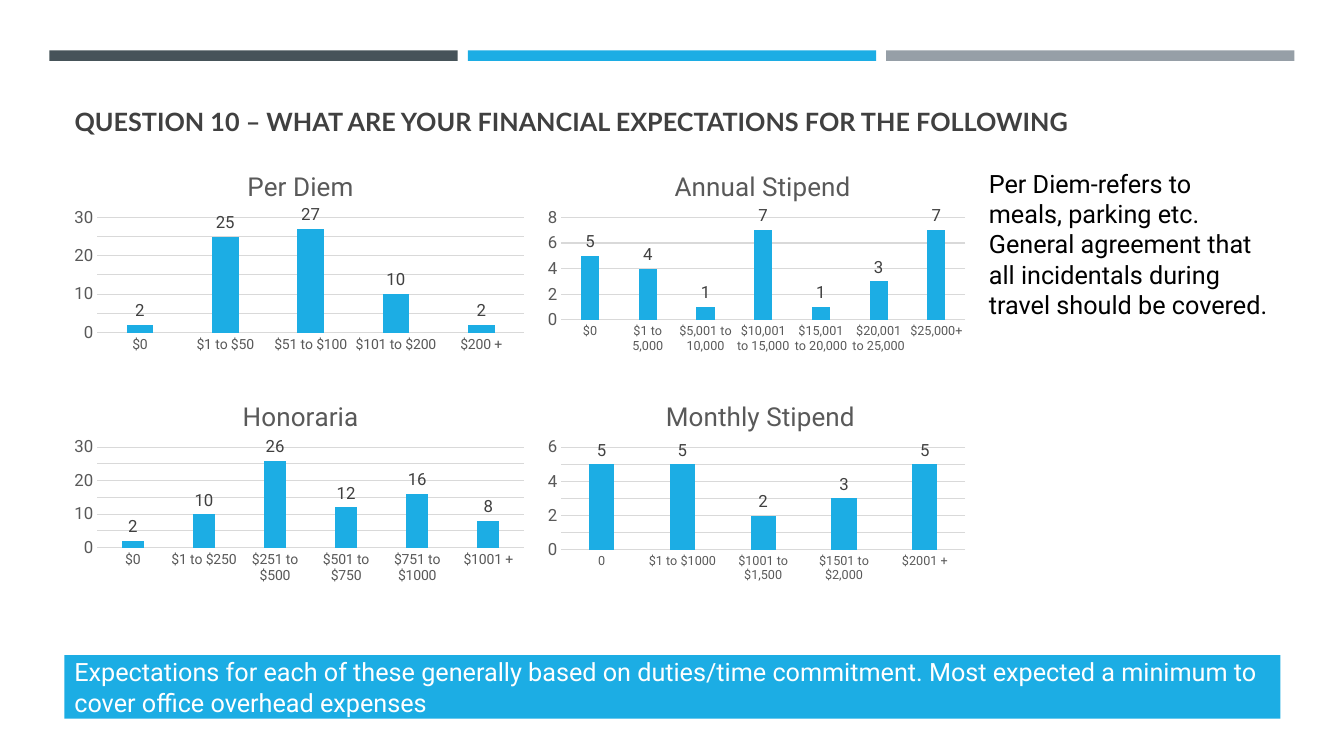
import pptx
import pptx.chart.data
import pptx.dml.color
import pptx.enum.chart
import pptx.enum.shapes
import pptx.enum.text
import pptx.oxml
import pptx.oxml.ns
import pptx.util

COLORS = {
    "slate": "465359", "blue": "1CADE4", "gray": "969FA7", "white": "FFFFFF",
    "black": "000000", "title": "404040", "axis": "595959", "grid": "D9D9D9",
}
ANCHOR = pptx.enum.text.MSO_ANCHOR
TICK = pptx.enum.chart.XL_TICK_MARK


def color(name):
    return pptx.dml.color.RGBColor.from_string(COLORS[name])


def apply(target, values):
    for name, value in values.items():
        setattr(target, name, value)


def set_layout(parent, index, **shares):
    """Place a chart part by shares of the chart's size."""
    for old in parent.findall(pptx.oxml.ns.qn("c:layout")):
        parent.remove(old)
    target = '<c:layoutTarget val="inner"/>' if "w" in shares else ""
    modes = "".join(f'<c:{axis}Mode val="edge"/>' for axis in "xy")
    values = "".join(f'<c:{key} val="{value}"/>' for key, value in shares.items())
    parent.insert(index, pptx.oxml.parse_xml(
        f'<c:layout {pptx.oxml.ns.nsdecls("c")}><c:manualLayout>'
        f'{target}{modes}{values}</c:manualLayout></c:layout>'))


class SlideBuilder:
    """Boxes are (left, top, width, height) in percent of the slide."""

    def __init__(self, presentation):
        self.presentation = presentation
        self.slide = presentation.slides.add_slide(presentation.slide_layouts[5])

    def place(self, box):
        width, height = self.presentation.slide_width, self.presentation.slide_height
        return [int(share * size / 100)
                for share, size in zip(box, (width, height, width, height))]

    def font(self, font, size, color_name, name="Roboto", bold=False):
        apply(font, {"name": name, "size": pptx.util.Pt(size), "bold": bold})
        font.color.rgb = color(color_name)

    def fill_text(self, shape, text, color_name, anchor, **font_values):
        frame = shape.text_frame
        apply(frame, {"text": text, "word_wrap": True, "vertical_anchor": anchor,
                      "auto_size": pptx.enum.text.MSO_AUTO_SIZE.NONE})
        paragraph = frame.paragraphs[0]
        paragraph.alignment = pptx.enum.text.PP_ALIGN.LEFT
        self.font(paragraph.runs[0].font, 18, color_name, **font_values)

    def title(self, box, text):
        shape = self.slide.shapes.title
        apply(shape, dict(zip(("left", "top", "width", "height"), self.place(box))))
        self.fill_text(shape, text, "title", ANCHOR.BOTTOM, name="Lato", bold=True)

    def rectangle(self, box, fill):
        shape = self.slide.shapes.add_shape(
            pptx.enum.shapes.MSO_SHAPE.RECTANGLE, *self.place(box))
        shape.shadow.inherit = False
        shape.fill.solid()
        shape.fill.fore_color.rgb = color(fill)
        shape.line.fill.background()
        return shape

    def banner(self, box, text):
        self.fill_text(self.rectangle(box, "blue"), text, "white", ANCHOR.MIDDLE)

    def note(self, box, text):
        shape = self.slide.shapes.add_textbox(*self.place(box))
        self.fill_text(shape, text, "black", ANCHOR.TOP)

    def grid_line(self, line):
        line.color.rgb = color("grid")
        line.width = pptx.util.Pt(0.75)

    def chart(self, box, title, values, maximum, unit, label_size, title_x, plot):
        data = pptx.chart.data.CategoryChartData()
        data.categories = list(values)
        data.add_series(title, list(values.values()))
        chart = self.slide.shapes.add_chart(
            pptx.enum.chart.XL_CHART_TYPE.COLUMN_CLUSTERED,
            *self.place(box), data).chart
        chart.has_legend = False
        self.font(chart.font, 10, "black")

        # Chart title
        chart.has_title = True
        heading = chart.chart_title
        heading.text_frame.text = title
        self.font(heading.text_frame.paragraphs[0].runs[0].font, 18.6, "axis")
        heading.include_in_layout = False
        set_layout(heading.element, 1, x=title_x, y=0.08)

        # Axes
        category, value = chart.category_axis, chart.value_axis
        for axis, size in ((category, label_size), (value, 12)):
            apply(axis, {"major_tick_mark": TICK.NONE, "minor_tick_mark": TICK.NONE})
            self.font(axis.tick_labels.font, size, "axis")
        apply(value, {"minimum_scale": 0, "maximum_scale": maximum,
                      "major_unit": unit, "has_major_gridlines": True})
        value.format.line.fill.background()
        self.grid_line(value.major_gridlines.format.line)
        self.grid_line(category.format.line)

        # Columns and their values
        columns = chart.plots[0]
        apply(columns, {"gap_width": 219, "overlap": -27,
                        "vary_by_categories": False, "has_data_labels": True})
        fill = columns.series[0].format.fill
        fill.solid()
        fill.fore_color.rgb = color("blue")
        apply(columns.data_labels, {
            "show_value": True,
            "position": pptx.enum.chart.XL_LABEL_POSITION.OUTSIDE_END})
        self.font(columns.data_labels.font, 12, "title")
        plot_area = chart.element.find(".//" + pptx.oxml.ns.qn("c:plotArea"))
        set_layout(plot_area, 0, **dict(zip("xywh", plot)))


def main():
    presentation = pptx.Presentation()
    presentation.slide_width = pptx.util.Inches(13.33)
    presentation.slide_height = pptx.util.Inches(7.5)
    builder = SlideBuilder(presentation)

    # Header bars and title
    for index, fill in enumerate(("slate", "blue", "gray")):
        builder.rectangle((3.68 + index * 31.13, 6.67, 30.38, 1.4), fill)
    builder.title((4.8, 10.27, 90.47, 8.4),
                  "QUESTION 10 – WHAT ARE YOUR FINANCIAL EXPECTATIONS FOR THE FOLLOWING")

    # Banner and side note
    builder.banner((4.8, 86.67, 90.47, 8.4),
                   "Expectations for each of these generally based on duties/time "
                   "commitment. Most expected a minimum to cover office overhead expenses")
    builder.note((72.84, 21.6, 22.36, 21.6),
                 "Per Diem-refers to meals, parking etc. General agreement that "
                 "all incidentals during travel should be covered.")

    # Two by two charts: title, values, axis maximum, axis unit, title x, plot height
    columns = (
        (4.8, 34.88, 10, 0.07, 0.91, (
            ("Per Diem", {"$0": 2, "$1 to $50": 25, "$51 to $100": 27,
                          "$101 to $200": 10, "$200 +": 2}, 30, 5, 0.38, 0.55),
            ("Honoraria", {"$0": 2, "$1 to $250": 10, "$251 to $500": 26,
                           "$501 to $750": 12, "$751 to $1000": 16,
                           "$1001 +": 8}, 30, 5, 0.37, 0.48))),
        (40.14, 32.33, 9, 0.05, 0.93, (
            ("Annual Stipend", {"$0": 5, "$1 to 5,000": 4, "$5,001 to 10,000": 1,
                                "$10,001 to 15,000": 7, "$15,001 to 20,000": 1,
                                "$20,001 to 25,000": 3, "$25,000+": 7},
             8, 2, 0.3, 0.49),
            ("Monthly Stipend", {"0": 5, "$1 to $1000": 5, "$1001 to $1,500": 2,
                                 "$1501 to $2,000": 3, "$2001 +": 5},
             6, 1, 0.28, 0.49))),
    )
    for left, width, label_size, plot_x, plot_width, charts in columns:
        for row, (title, values, maximum, unit, title_x, plot_height) in enumerate(charts):
            builder.chart((left, 19.6 + row * 30.4, width, 27.73), title, values,
                          maximum, unit, label_size, title_x,
                          (plot_x, 0.33, plot_width, plot_height))

    presentation.save("out.pptx")


if __name__ == "__main__":
    main()
